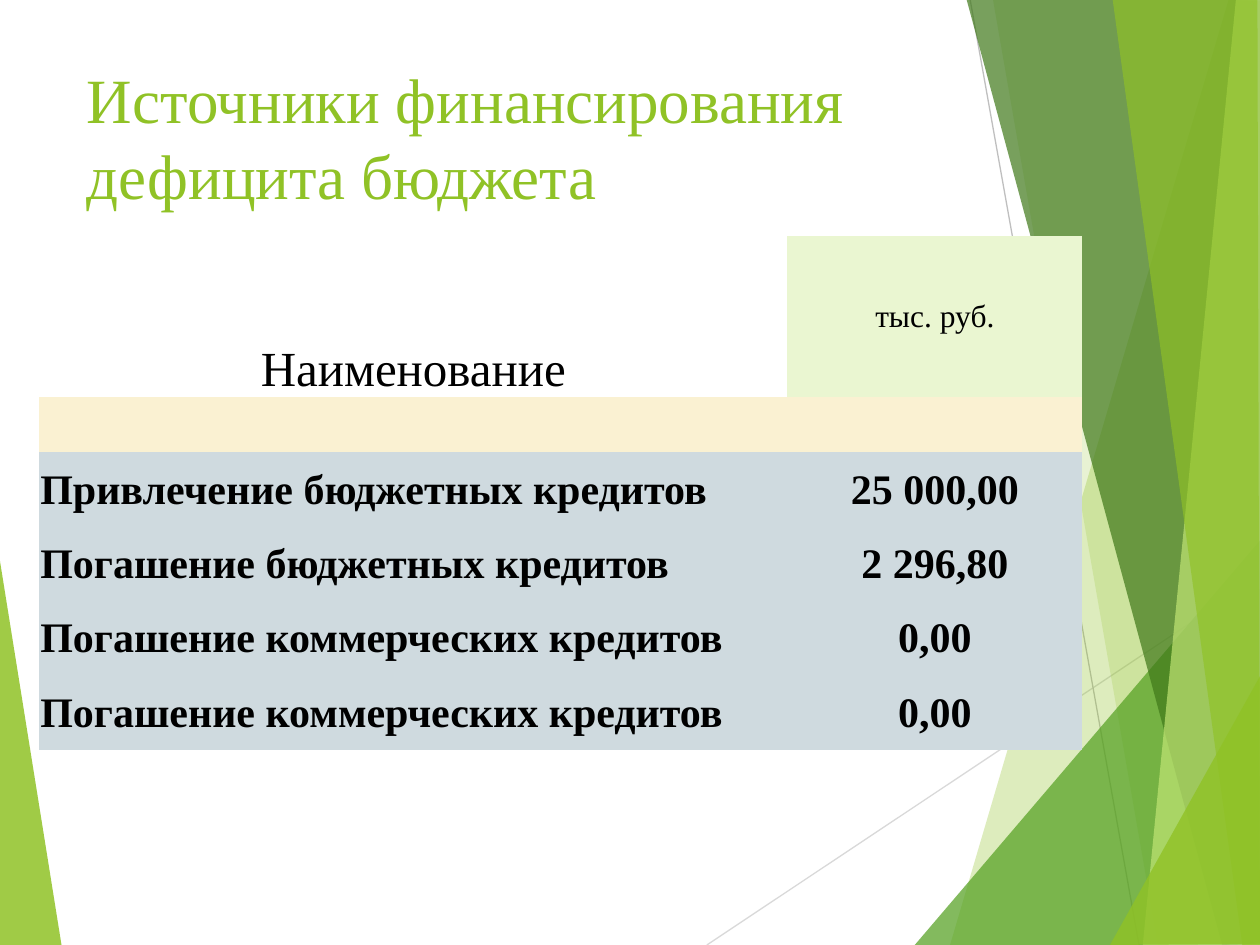
from dataclasses import dataclass

from lxml import etree
from pptx import Presentation
from pptx.dml.color import RGBColor
from pptx.enum.shapes import MSO_CONNECTOR
from pptx.enum.text import MSO_ANCHOR, PP_ALIGN
from pptx.oxml.ns import qn
from pptx.util import Inches, Pt

STRAIGHT = MSO_CONNECTOR.STRAIGHT
LEFT, CENTER = PP_ALIGN.LEFT, PP_ALIGN.CENTER
MIDDLE, BOTTOM = MSO_ANCHOR.MIDDLE, MSO_ANCHOR.BOTTOM
TITLE_ONLY = 5
PLAIN_TABLE_STYLE = "{2D5ABB26-0587-4C30-8999-92F81FD0307C}"

Point = tuple[float, float]


@dataclass(frozen=True)
class Theme:
    font: str = "Times New Roman"
    lime: str = "90C226"
    green: str = "54A021"
    dark_green: str = "3F7819"
    pale_lime: str = "C0E474"
    ink: str = "000000"
    unit_fill: str = "EAF6D1"
    spacer_fill: str = "FAF1D2"
    body_fill: str = "CFDADF"
    title_size: int = 36
    header_size: int = 28
    unit_size: int = 18
    body_size: int = 24


@dataclass(frozen=True)
class Facet:
    color: str
    opacity: int
    points: tuple[Point, ...]


@dataclass(frozen=True)
class Ray:
    color: str
    start: Point
    end: Point


THEME = Theme()

LEFT_FACET = Facet(THEME.lime, 85, ((-0.01, 4.39), (0.49, 7.51), (-0.01, 7.5)))
RAYS = (
    Ray("D9D9D9", (5.61, 7.5), (10.01, 4.57)),
    Ray("BFBFBF", (7.7, 0), (9.04, 7.5)),
)
RIGHT_FACETS = (
    Facet(THEME.lime, 30, ((9.75, 0), (7.54, 7.5), (10.02, 7.51), (10.01, 0.01))),
    Facet(THEME.lime, 20, ((7.88, -0.01), (9.19, 7.5), (10.01, 7.5), (10.01, -0.01))),
    Facet(THEME.green, 72, ((7.26, 7.5), (10, 4.29), (10.01, 7.5))),
    Facet(THEME.dark_green, 70, ((7.67, -0.01), (9.7, 7.5), (10.01, 7.49), (10.01, -0.01))),
    Facet(THEME.pale_lime, 70, ((9.81, -0.01), (9.07, 7.5), (10.01, 7.5), (10, -0.01))),
    Facet(THEME.lime, 65, ((8.83, -0.01), (9.86, 7.5), (10, 7.5), (9.98, -0.01))),
    Facet(THEME.lime, 80, ((8.81, 7.5), (10.01, 5.35), (10.01, 7.49))),
)

COLUMN_WIDTHS = (5.94, 2.34)
ROW_HEIGHTS = (1.28, 0.44, 0.59, 0.59, 0.59, 0.59)
FIRST_BODY_ROW = 2
SOURCES = (
    ("Привлечение бюджетных кредитов", "25 000,00"),
    ("Погашение бюджетных кредитов", "2 296,80"),
    ("Погашение коммерческих кредитов", "0,00"),
    ("Погашение коммерческих кредитов", "0,00"),
)


def write_text(frame, text: str, *, size: int, color: str = THEME.ink,
               bold: bool = False, align=LEFT) -> None:
    para = frame.paragraphs[0]
    para.alignment = align
    span = para.add_run()
    span.text = text
    span.font.name = THEME.font
    span.font.size = Pt(size)
    span.font.bold = bold
    span.font.color.rgb = RGBColor.from_string(color)


def draw_facet(page, facet: Facet) -> None:
    corners = [(Inches(x), Inches(y)) for x, y in facet.points]
    builder = page.shapes.build_freeform(*corners[0])
    builder.add_line_segments(corners[1:], close=True)
    shape = builder.convert_to_shape()
    shape.shadow.inherit = False
    shape.line.fill.background()
    shape.fill.solid()
    shape.fill.fore_color.rgb = RGBColor.from_string(facet.color)
    color = shape.element.spPr.find(qn("a:solidFill"))[0]
    etree.SubElement(color, qn("a:alpha"), val=str(facet.opacity * 1000))


def draw_ray(page, ray: Ray) -> None:
    ends = [Inches(value) for value in ray.start + ray.end]
    line = page.shapes.add_connector(STRAIGHT, *ends)
    line.line.color.rgb = RGBColor.from_string(ray.color)
    line.line.width = Pt(0.75)
    etree.SubElement(line.element.spPr, qn("a:effectLst"))


def fill_cell(cell, color: str) -> None:
    cell.fill.solid()
    cell.fill.fore_color.rgb = RGBColor.from_string(color)


def write_cell(cell, text: str, *, anchor=MIDDLE, **text_format) -> None:
    cell.margin_left = cell.margin_right = cell.margin_top = Inches(0.01)
    cell.margin_bottom = 0
    cell.vertical_anchor = anchor
    write_text(cell.text_frame, text, **text_format)


def draw_table(page) -> None:
    frame = page.shapes.add_table(
        len(ROW_HEIGHTS), len(COLUMN_WIDTHS), Inches(0.31), Inches(1.87),
        Inches(sum(COLUMN_WIDTHS)), Inches(sum(ROW_HEIGHTS)))
    table = frame.table
    table.first_row = table.horz_banding = False
    next(frame.element.iter(qn("a:tableStyleId"))).text = PLAIN_TABLE_STYLE
    for column, width in zip(table.columns, COLUMN_WIDTHS):
        column.width = Inches(width)
    for row, height in zip(table.rows, ROW_HEIGHTS):
        row.height = Inches(height)

    # Header and spacer rows
    name, unit = table.rows[0].cells
    name.fill.background()
    write_cell(name, "Наименование", size=THEME.header_size, align=CENTER, anchor=BOTTOM)
    fill_cell(unit, THEME.unit_fill)
    write_cell(unit, "тыс. руб.", size=THEME.unit_size, align=CENTER)
    for cell in table.rows[1].cells:
        fill_cell(cell, THEME.spacer_fill)

    # Financing sources
    for row_index, source in enumerate(SOURCES, FIRST_BODY_ROW):
        for cell, text, align in zip(table.rows[row_index].cells, source, (LEFT, CENTER)):
            fill_cell(cell, THEME.body_fill)
            write_cell(cell, text, size=THEME.body_size, bold=True, align=align)


def draw_title(page) -> None:
    title = page.shapes.title
    title.left, title.top = Inches(0.59), Inches(0.36)
    title.width, title.height = Inches(6.94), Inches(1.44)
    title.text_frame.word_wrap = True
    title.text_frame.vertical_anchor = MIDDLE
    write_text(title.text_frame, "Источники финансирования дефицита бюджета",
               size=THEME.title_size, color=THEME.lime)


def main() -> None:
    deck = Presentation()
    deck.slide_width, deck.slide_height = Inches(10), Inches(7.5)
    page = deck.slides.add_slide(deck.slide_layouts[TITLE_ONLY])

    # Background decoration
    draw_facet(page, LEFT_FACET)
    for ray in RAYS:
        draw_ray(page, ray)
    for facet in RIGHT_FACETS:
        draw_facet(page, facet)

    # Content
    draw_title(page)
    draw_table(page)
    deck.save("out.pptx")


if __name__ == "__main__":
    main()
